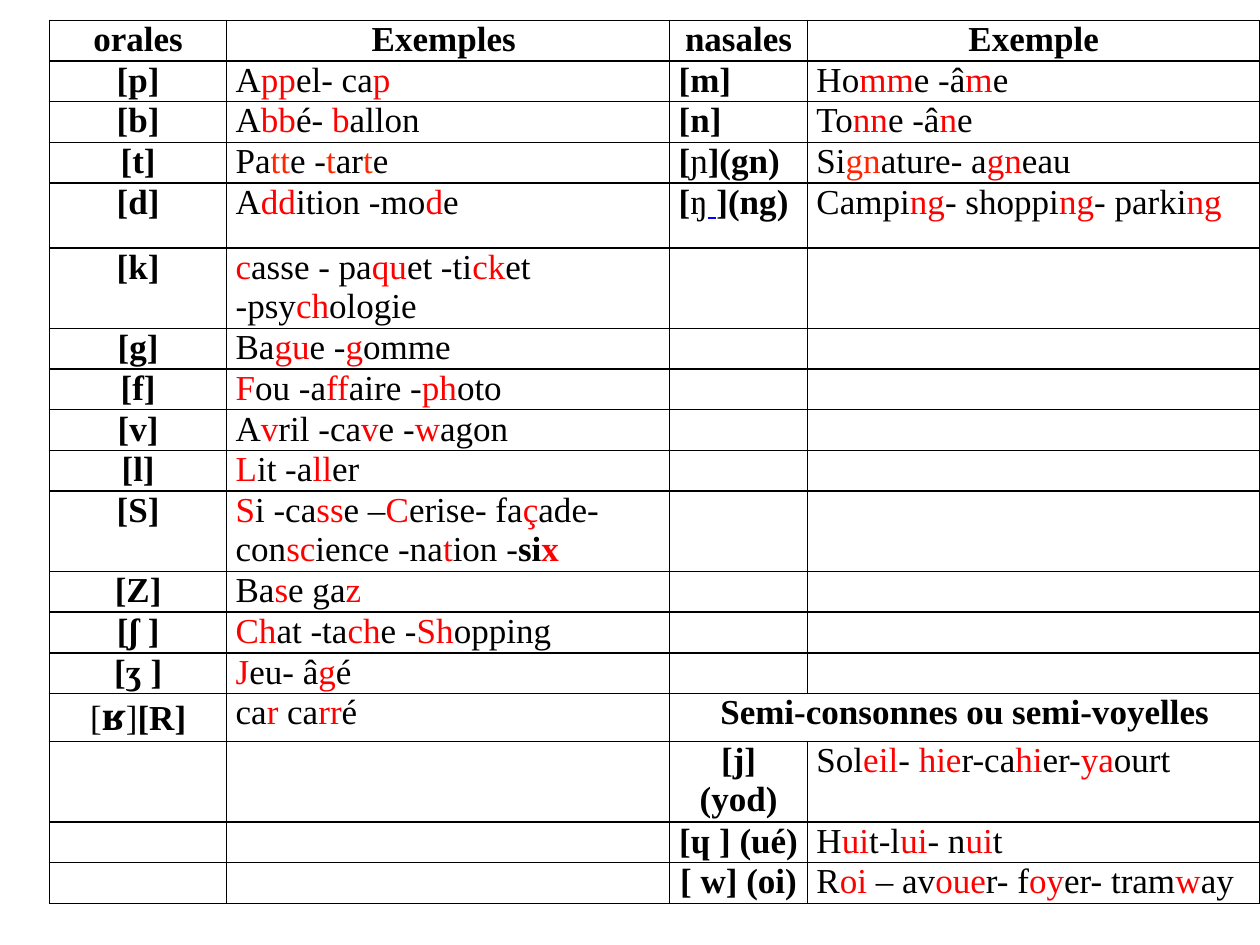
"""Build the slide that tables French consonants and semi-vowels with examples."""
from dataclasses import dataclass

from lxml import etree
from pptx import Presentation
from pptx.dml import color
from pptx.enum import text
from pptx.oxml import ns
from pptx.util import Cm, Pt


@dataclass(frozen=True)
class Theme:
    font: str = "Times New Roman"
    body: int = 20
    large: int = 24
    ink: str = "000000"
    accent: str = "FF0000"
    orange: str = "FF2600"
    link: str = "0000FF"
    border: int = 1


theme = Theme()


def add_pieces(paragraph, marked, is_symbol):
    """Alternate plain and accented runs at |, with ^ orange, * bold, _ link, + large."""
    for index, piece in enumerate(marked.split("|")):
        mark = piece[:1] if piece[:1] in ("^", "*", "_", "+") else ""
        wording = piece[len(mark):]
        if not wording:
            continue
        odd = index % 2 == 1
        run = paragraph.add_run()
        run.text = wording
        run.font.name = theme.font
        run.font.size = Pt(theme.large if mark == "+" else theme.body)
        run.font.bold = mark == "*" or (is_symbol and not odd)
        run.font.underline = mark == "_"
        shade = theme.accent if odd and not is_symbol else theme.ink
        shade = {"^": theme.orange, "_": theme.link}.get(mark, shade)
        run.font.color.rgb = color.RGBColor.from_string(shade)


def add_borders(cell):
    """Draw the four cell edges."""
    properties = cell._tc.get_or_add_tcPr()
    for position, side in enumerate(("lnL", "lnR", "lnT", "lnB")):
        edge = etree.Element(ns.qn(f"a:{side}"), w=str(Pt(theme.border)))
        fill = etree.SubElement(edge, ns.qn("a:solidFill"))
        etree.SubElement(fill, ns.qn("a:srgbClr"), val=theme.ink)
        properties.insert(position, edge)


single, double = 0.82, 1.62
column_widths = (3.57, 8.93, 2.78, 9.12)
semi_row = 14
sounds = [
    (single, "orales", "*Exemples ", "nasales", "*Exemple"),
    (single, "[p]", "A|pp|el- ca|p", "[m]", "Ho|mm|e -â|m|e"),
    (single, "[b]", "A|bb|é- |b|allon", "[n]", "To|nn|e -â|n|e"),
    (single, "[t]", "Pa|^tt|e -|^t|ar|^t|e", "[|ɲ|](gn)", "Si|^gn|ature- a|gn|eau "),
    (1.31, "[d]", "A|dd|ition -mo|d|e", "[|ŋ|_ ||](ng)",
     "Campi|ng|- shoppi|ng|- parki|ng"),
    (double, "[k]", "|c|asse - pa|qu|et -ti|ck|et -psy|ch|ologie", "", ""),
    (single, "[g]", "Ba|gu|e -|g|omme", "", ""),
    (single, "[f]", "|F|ou -a|ff|aire -|ph|oto", "", ""),
    (single, "[v]", "A|v|ril -ca|v|e -|w|agon", "", ""),
    (single, "[l]", "|L|it -a|ll|er", "", ""),
    (double, "[S]",
     "|S|i -ca|ss|e –|C|erise- fa|ç|ade- con|sc|ience -na|t|ion -||*si|*x", "", ""),
    (single, "[Z]", "Ba|s|e ga|z", "", ""),
    (single, "[ʃ ]", "|Ch|at -ta|ch|e -|Sh|opping", "", ""),
    (single, "[ʒ ]", "|J|eu- â|g|é", "", ""),
    (0.97, "|[|+ʁ|]|[R]", "ca|r |ca|rr|é", "Semi-consonnes ou semi-voyelles", ""),
    (double, "", "", "[j] (yod)", "Sol|eil|- |hie|r-ca|hi|er-|ya|ourt"),
    (single, "", "", "[ɥ ] (ué)", "H|ui|t-l|ui|- n|ui|t"),
    (single, "", "", "[ w] (oi)", "R|oi| – av|oue|r- f|oy|er- tram|w|ay"),
]

deck = Presentation()
deck.slide_width, deck.slide_height = Cm(25.4), Cm(19.05)
slide = deck.slides.add_slide(deck.slide_layouts[6])

sound_table = slide.shapes.add_table(
    len(sounds), len(column_widths), Cm(1), Cm(0.41),
    Cm(sum(column_widths)), Cm(sum(row[0] for row in sounds))).table
sound_table.first_row = sound_table.horz_banding = False
for column, width in zip(sound_table.columns, column_widths):
    column.width = Cm(width)

for row_index, (height, *entries) in enumerate(sounds):
    sound_table.rows[row_index].height = Cm(height)
    for column_index, entry in enumerate(entries):
        cell = sound_table.cell(row_index, column_index)
        cell.margin_left = cell.margin_right = Cm(0.18)
        cell.margin_top = cell.margin_bottom = 0
        cell.fill.background()
        add_borders(cell)
        paragraph = cell.text_frame.paragraphs[0]
        centred = (row_index == 0 or column_index == 0
                   or (column_index == 2 and row_index >= semi_row))
        paragraph.alignment = text.PP_ALIGN.CENTER if centred else text.PP_ALIGN.LEFT
        add_pieces(paragraph, entry, column_index % 2 == 0)

sound_table.cell(semi_row, 2).merge(sound_table.cell(semi_row, 3))
deck.save("out.pptx")
